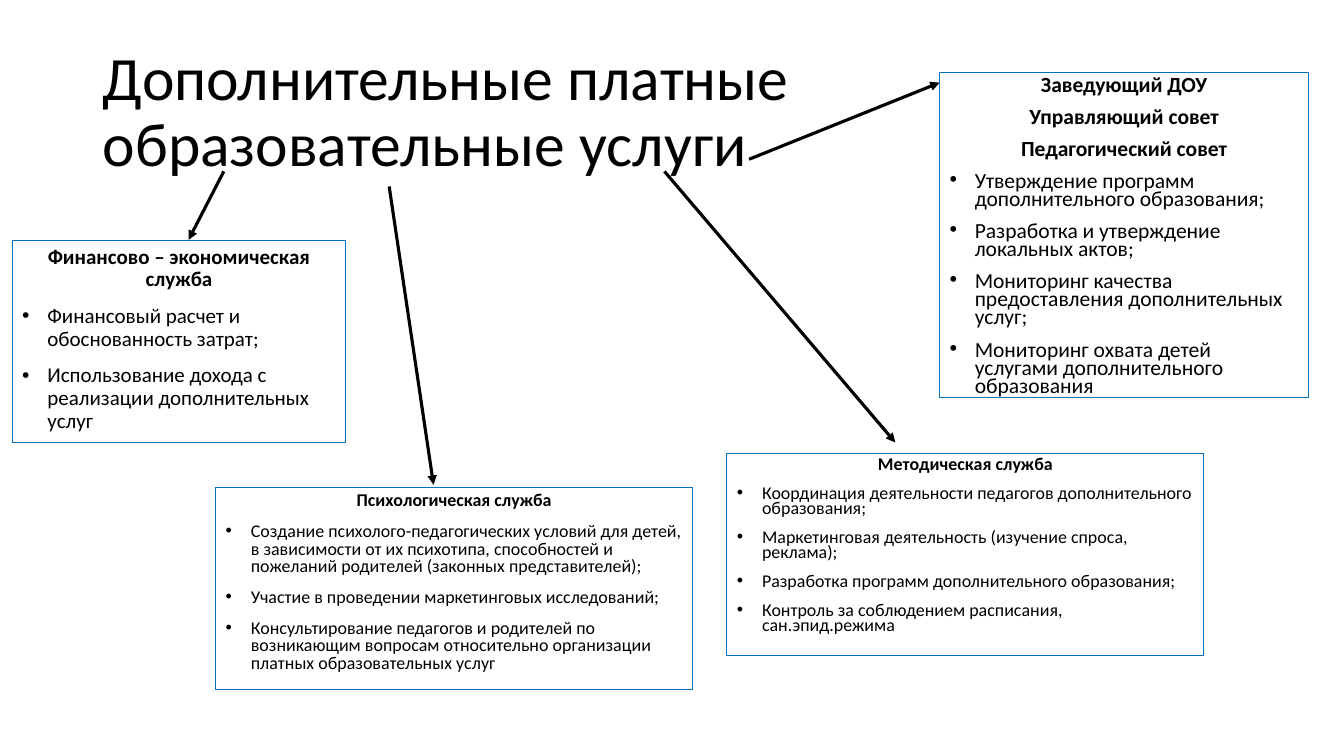
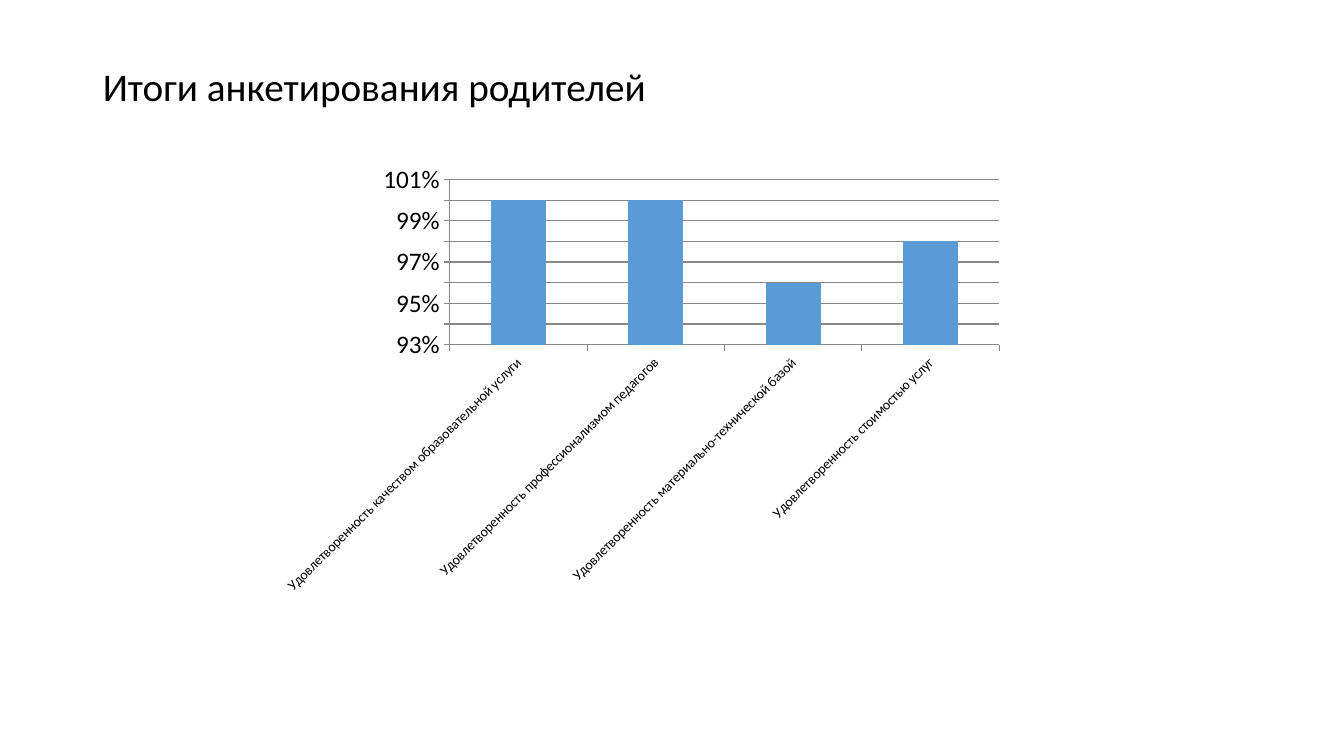
from lxml.etree import SubElement
from pptx import Presentation
from pptx.chart.data import CategoryChartData
from pptx.dml.color import RGBColor
from pptx.enum.chart import XL_CHART_TYPE, XL_TICK_MARK
from pptx.enum.shapes import MSO_CONNECTOR, MSO_SHAPE
from pptx.enum.text import MSO_ANCHOR, MSO_AUTO_SIZE, PP_ALIGN
from pptx.oxml.ns import qn
from pptx.util import Inches, Pt

FONT = "Calibri"
COLORS = {"text": "000000", "border": "0070C0", "bar": "5B9BD5", "axis": "878787"}
TITLE_AND_CONTENT, TITLE_ONLY = 1, 5


def color(name):
    return RGBColor.from_string(COLORS[name])


class Deck:
    def __init__(self):
        self.presentation = Presentation()
        self.presentation.slide_width = Inches(13.33)
        self.presentation.slide_height = Inches(7.5)
        self.slide = None

    def add_slide(self, layout):
        self.slide = self.presentation.slides.add_slide(
            self.presentation.slide_layouts[layout])

    def place(self, shape, left, top, width, height):
        shape.left, shape.top = Inches(left), Inches(top)
        shape.width, shape.height = Inches(width), Inches(height)

    def style_font(self, font, size, bold=False):
        font.name, font.size, font.bold = FONT, Pt(size), bold
        font.color.rgb = color("text")

    def prepare_frame(self, shape, anchor):
        frame = shape.text_frame
        frame.word_wrap = True
        frame.auto_size = MSO_AUTO_SIZE.NONE
        frame.vertical_anchor = anchor
        return frame

    def add_text(self, paragraph, text, size, spacing, bold=False):
        paragraph.line_spacing = spacing
        run = paragraph.add_run()
        run.text = text
        self.style_font(run.font, size, bold)

    def set_bullet(self, paragraph, bulleted):
        properties = paragraph._p.get_or_add_pPr()
        indent = Inches(0.25) if bulleted else 0
        properties.set("marL", str(indent))
        properties.set("indent", str(-indent))
        if bulleted:
            SubElement(properties, qn("a:buFont"), typeface="Arial")
            SubElement(properties, qn("a:buChar"), char="•")
        else:
            SubElement(properties, qn("a:buNone"))

    def title(self, text, bounds, size, anchor):
        shape = self.slide.shapes.title
        self.place(shape, *bounds)
        paragraph = self.prepare_frame(shape, anchor).paragraphs[0]
        paragraph.alignment = PP_ALIGN.LEFT
        self.add_text(paragraph, text, size, 0.9)

    def service_box(self, bounds, headings, duties, size, spacing, shape=None):
        """Bordered box of centred headings and bulleted duties; may reuse a placeholder."""
        if shape is None:
            shape = self.slide.shapes.add_shape(MSO_SHAPE.RECTANGLE, 0, 0, 0, 0)
            shape.shadow.inherit = False
        self.place(shape, *bounds)
        shape.fill.background()
        shape.line.color.rgb = color("border")
        shape.line.width = Pt(0.75)
        frame = self.prepare_frame(shape, MSO_ANCHOR.TOP)
        for index, text in enumerate(headings + duties):
            is_heading = index < len(headings)
            paragraph = frame.add_paragraph() if index else frame.paragraphs[0]
            self.set_bullet(paragraph, not is_heading)
            paragraph.alignment = PP_ALIGN.CENTER if is_heading else PP_ALIGN.LEFT
            paragraph.space_before = Pt(10 if index else 0)
            self.add_text(paragraph, text, size, spacing, is_heading)

    def arrow(self, start, end):
        connector = self.slide.shapes.add_connector(
            MSO_CONNECTOR.STRAIGHT, *map(Inches, start + end))
        connector.line.color.rgb = color("text")
        connector.line.width = Pt(2.25)
        SubElement(connector.line._get_or_add_ln(), qn("a:tailEnd"), type="triangle")
        SubElement(connector._element.spPr, qn("a:effectLst"))

    def column_chart(self, bounds, values_by_category):
        data = CategoryChartData(number_format="0%")
        data.categories = list(values_by_category)
        data.add_series("Удовлетворенность", list(values_by_category.values()))
        chart = self.slide.shapes.add_chart(
            XL_CHART_TYPE.COLUMN_CLUSTERED, *map(Inches, bounds), data).chart
        chart.has_legend = chart.has_title = False
        self.style_font(chart.font, 18)

        plot = chart.plots[0]
        plot.gap_width = 150
        plot.vary_by_categories = False
        fill = plot.series[0].format.fill
        fill.solid()
        fill.fore_color.rgb = color("bar")

        value_axis, category_axis = chart.value_axis, chart.category_axis
        value_axis.minimum_scale, value_axis.maximum_scale = 0.93, 1.01
        value_axis.major_unit = 0.01
        value_axis.tick_labels.number_format = "0%"
        value_axis.tick_labels.number_format_is_linked = False
        value_axis.has_major_gridlines = True
        for axis in (value_axis, category_axis):
            axis.major_tick_mark = XL_TICK_MARK.OUTSIDE
            axis.minor_tick_mark = XL_TICK_MARK.NONE
        for element in (value_axis, category_axis, value_axis.major_gridlines):
            element.format.line.color.rgb = color("axis")
            element.format.line.width = Pt(0.75)
        self.style_font(category_axis.tick_labels.font, 10)
        label_body = chart.element.xpath(".//c:catAx/c:txPr/a:bodyPr")[0]
        label_body.set("rot", str(-45 * 60000))
        label_body.set("vert", "horz")


def add_services_slide(deck):
    deck.add_slide(TITLE_AND_CONTENT)
    deck.title("Дополнительные платные образовательные услуги",
               (0.92, 0.4, 11.5, 1.45), 44, MSO_ANCHOR.MIDDLE)
    deck.service_box(
        (0.12, 2.39, 3.31, 2),
        ["Финансово – экономическая служба"],
        ["Финансовый расчет и обоснованность затрат;",
         "Использование дохода с реализации дополнительных услуг"],
        15, 0.9, deck.slide.placeholders[1])
    deck.service_box(
        (9.32, 0.72, 3.66, 3.22),
        ["Заведующий ДОУ", "Управляющий совет", "Педагогический совет"],
        ["Утверждение программ дополнительного образования;",
         "Разработка и утверждение локальных актов;",
         "Мониторинг качества предоставления дополнительных услуг;",
         "Мониторинг охвата детей услугами дополнительного образования"],
        15.4, 0.7)
    deck.service_box(
        (2.14, 4.84, 4.73, 2),
        ["Психологическая служба"],
        ["Создание психолого-педагогических условий для детей, в зависимости от их "
         "психотипа, способностей и пожеланий родителей (законных представителей);",
         "Участие в проведении маркетинговых исследований;",
         "Консультирование педагогов и родителей по возникающим вопросам "
         "относительно организации платных образовательных услуг"],
        12.8, 0.8)
    deck.service_box(
        (7.21, 4.5, 4.73, 2),
        ["Методическая служба"],
        ["Координация деятельности педагогов дополнительного образования;",
         "Маркетинговая деятельность (изучение спроса, реклама);",
         "Разработка программ дополнительного образования;",
         "Контроль за соблюдением расписания, сан.эпид.режима"],
        12.8, 0.7)
    for start, end in (((2.22, 1.7), (1.87, 2.38)),
                       ((7.43, 1.58), (9.32, 0.82)),
                       ((3.86, 1.85), (4.3, 4.81)),
                       ((6.59, 1.7), (8.88, 4.39))):
        deck.arrow(start, end)


def add_survey_slide(deck):
    deck.add_slide(TITLE_ONLY)
    deck.title("Итоги анкетирования родителей",
               (0.92, 0.62, 11.5, 0.7), 28, MSO_ANCHOR.TOP)
    deck.column_chart((2.67, 1.54, 7.39, 4.44), {
        "Удовлетворенность качеством образовательной услуги": 1,
        "Удовлетворенность профессионализмом педагогов": 1,
        "Удовлетворенность материально-технической базой": 0.96,
        "Удовлетворенность стоимостью услуг": 0.98,
    })


def main():
    deck = Deck()
    add_services_slide(deck)
    add_survey_slide(deck)
    deck.presentation.save("out.pptx")


if __name__ == "__main__":
    main()
